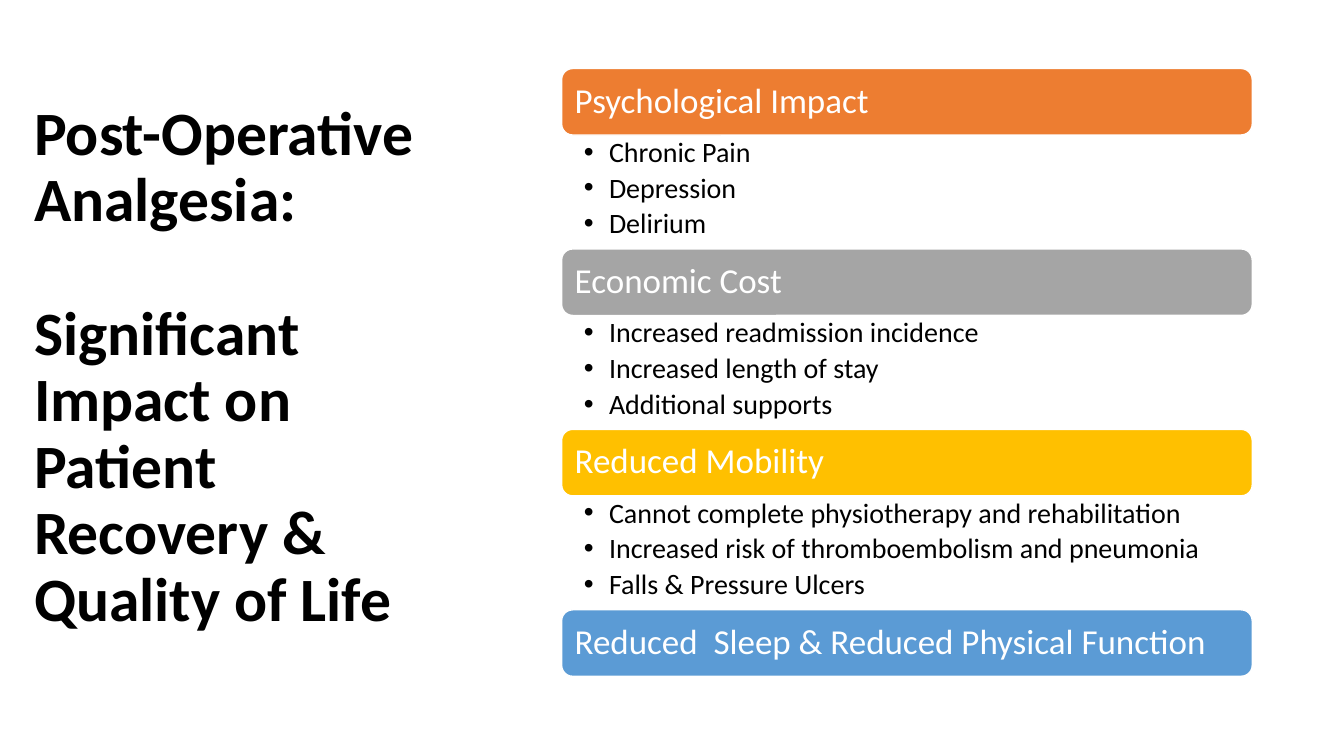
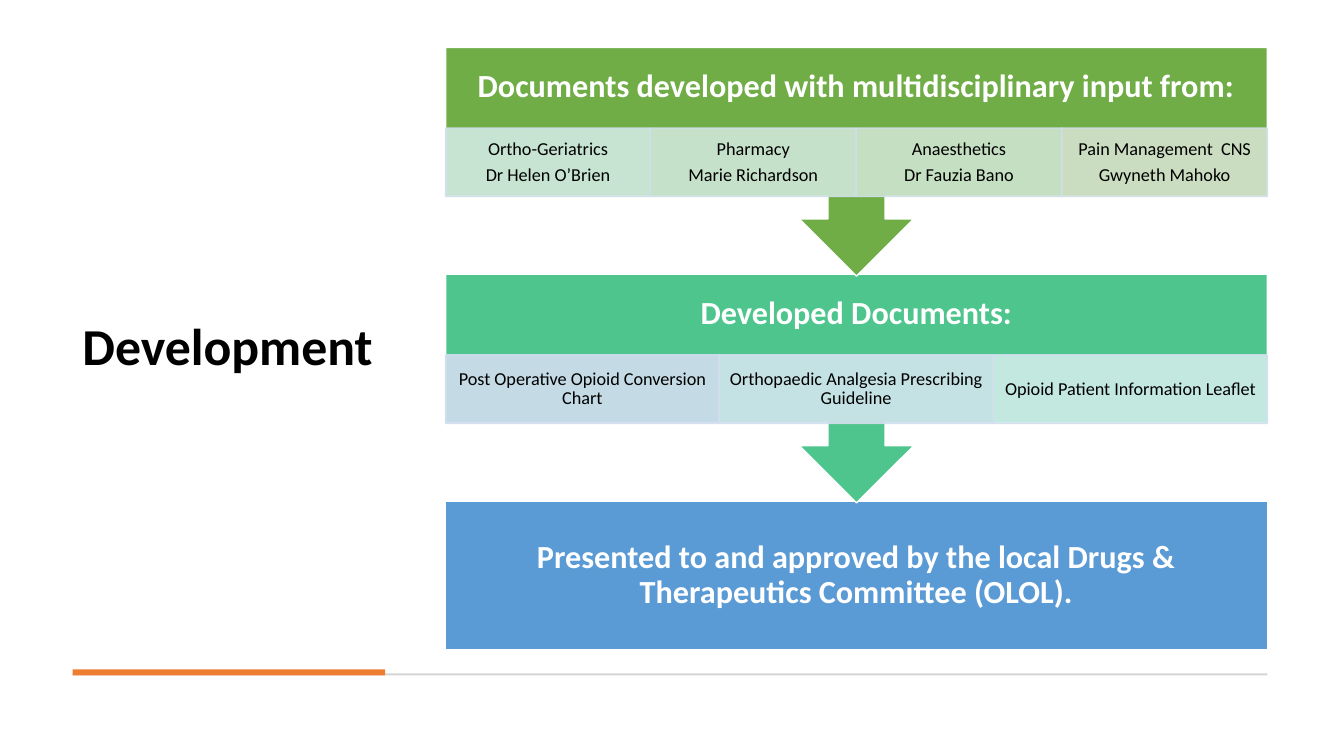
from lxml.etree import SubElement
from pptx import Presentation
from pptx.dml.color import RGBColor as RGB
from pptx.enum.shapes import MSO_SHAPE as SHAPE
from pptx.enum.text import MSO_ANCHOR as ANCHOR, PP_ALIGN as ALIGN
from pptx.oxml.ns import qn
from pptx.util import Emu, Pt

COLORS = {
    "black": "000000", "white": "FFFFFF", "orange": "ED7D31", "gray": "A5A5A5",
    "gold": "FFC000", "blue": "5B9BD5", "green": "70AD47", "teal": "4DC58D",
    "rule": "D5D5D5", "edge": "D2DEEF",
    "ice": "D2DEEF", "sky": "D1E6EE", "aqua": "D0ECEA", "mint": "D0EAE1",
    "sage": "D0E7D8", "leaf": "CFE5D0", "olive": "D5E3CF",
}
FONT = "Calibri"
PX = 9144


def px(n):
    return Emu(n * PX)


def write(sp, text, size=20, color="black", bold=False, align=ALIGN.LEFT,
          anchor=ANCHOR.MIDDLE, inset=(10, 10, 10, 10), after=0.35, bullet=False):
    tf = sp.text_frame
    tf.word_wrap = True
    tf.vertical_anchor = anchor
    tf.margin_left, tf.margin_top, tf.margin_right, tf.margin_bottom = map(px, inset)
    for i, line in enumerate(text.split("\n")):
        p = tf.add_paragraph() if i else tf.paragraphs[0]
        p.text = line
        p.alignment = align
        p.line_spacing = 0.9
        p.space_after = Pt(size * after)
        for r in p.runs:
            r.font.name, r.font.size, r.font.bold = FONT, Pt(size), bold
            r.font.color.rgb = RGB.from_string(COLORS[color])
        if bullet:
            pPr = p._p.get_or_add_pPr()
            pPr.set("marL", str(px(25)))
            pPr.set("indent", str(px(-25)))
            SubElement(pPr, qn("a:buFont"), typeface="Arial")
            SubElement(pPr, qn("a:buChar"), char="•")


class Deck:
    """Holds the shared style and the current slide."""

    def __init__(self):
        self.prs = Presentation()
        self.prs.slide_width, self.prs.slide_height = px(1333), px(750)

    def new_slide(self):
        self.s = self.prs.slides.add_slide(self.prs.slide_layouts[6])

    def text(self, box, text, **fmt):
        write(self.s.shapes.add_textbox(*map(px, box)), text, **fmt)

    def title(self, box, text, size):
        self.text(box, text, size=size, bold=True, inset=(10, 5, 10, 5), after=1.09)

    def shape(self, kind, box, fill, line=None, alpha=None):
        sp = self.s.shapes.add_shape(kind, *map(px, box))
        sp.shadow.inherit = False
        sp.fill.solid()
        sp.fill.fore_color.rgb = RGB.from_string(COLORS[fill])
        if line:
            sp.line.width = Pt(1)
            sp.line.color.rgb = RGB.from_string(COLORS[line])
        else:
            sp.line.fill.background()
        if alpha:
            for clr in sp._element.spPr.iter(qn("a:srgbClr")):
                SubElement(clr, qn("a:alpha"), val=str(alpha * 1000))
        return sp

    def bar(self, box, text, fill):
        sp = self.shape(SHAPE.ROUNDED_RECTANGLE, box, fill, "white")
        write(sp, text, size=25, color="white")

    def bullets(self, box, text):
        self.text(box, text, anchor=ANCHOR.TOP, inset=(22, 3, 19, 3),
                  after=0.2, bullet=True)

    def panel(self, kind, box, text, fill, bottom=18):
        sp = self.shape(kind, box, fill, "white")
        write(sp, text, size=23, color="white", bold=True, align=ALIGN.CENTER,
              inset=(18, 18, 18, bottom))

    def cells(self, box, items):
        x, y, w, h = box
        edges = [x + w * i // len(items) for i in range(len(items) + 1)]
        for left, right, (text, fill) in zip(edges, edges[1:], items):
            sp = self.shape(SHAPE.RECTANGLE, (left, y, right - left, h),
                            fill, "edge", alpha=90)
            write(sp, text, size=13, align=ALIGN.CENTER, inset=(10, 2, 10, 2))


def impact_slide(deck):
    deck.new_slide()
    deck.title((24, 61, 437, 609), "Post-Operative\vAnalgesia:\n"
               "Significant Impact on Patient Recovery & Quality of Life", 44)
    sections = [
        ("Psychological Impact", "orange", "Chronic Pain\nDepression\nDelirium"),
        ("Economic Cost", "gray", "Increased readmission incidence\n"
         "Increased length of stay\nAdditional supports"),
        ("Reduced Mobility", "gold",
         "Cannot complete physiotherapy and rehabilitation\n"
         "Increased risk of thromboembolism and pneumonia\nFalls & Pressure Ulcers"),
        ("Reduced  Sleep & Reduced Physical Function", "blue", None),
    ]
    x, top, w, bar_h, list_h = 557, 68, 685, 66, 113
    for i, (heading, fill, points) in enumerate(sections):
        y = top + i * (bar_h + list_h)
        deck.bar((x, y, w, bar_h), heading, fill)
        if points:
            deck.bullets((x, y + bar_h, w, list_h), points)


def development_slide(deck):
    deck.new_slide()
    deck.title((72, 47, 316, 597), "Development", 37)
    deck.shape(SHAPE.RECTANGLE, (72, 668, 1185, 2), "rule")
    deck.shape(SHAPE.RECTANGLE, (72, 664, 310, 6), "orange")
    x, top, w, pitch = 442, 47, 815, 225
    callout_h, body_h, head_h, cell_h = 227, 148, 80, 68
    deck.panel(SHAPE.RECTANGLE, (x, top + 2 * pitch, w, body_h),
               "Presented to and approved by the local Drugs & "
               "Therapeutics Committee (OLOL).", "blue")
    stages = [
        ("Documents developed with multidisciplinary input from:", "green", [
            ("Ortho-Geriatrics\nDr Helen O’Brien", "mint"),
            ("Pharmacy\nMarie Richardson", "sage"),
            ("Anaesthetics\nDr Fauzia Bano", "leaf"),
            ("Pain Management  CNS\nGwyneth Mahoko", "olive")]),
        ("Developed Documents:", "teal", [
            ("Post Operative Opioid Conversion Chart", "ice"),
            ("Orthopaedic Analgesia Prescribing Guideline", "sky"),
            ("Opioid Patient Information Leaflet", "aqua")]),
    ]
    for i, (heading, fill, items) in reversed(list(enumerate(stages))):
        y = top + i * pitch
        deck.panel(SHAPE.DOWN_ARROW_CALLOUT, (x, y, w, callout_h), heading, fill,
                   bottom=18 + cell_h)
        deck.cells((x, y + head_h, w, cell_h), items)


def main():
    deck = Deck()
    impact_slide(deck)
    development_slide(deck)
    deck.prs.save("out.pptx")


if __name__ == "__main__":
    main()
